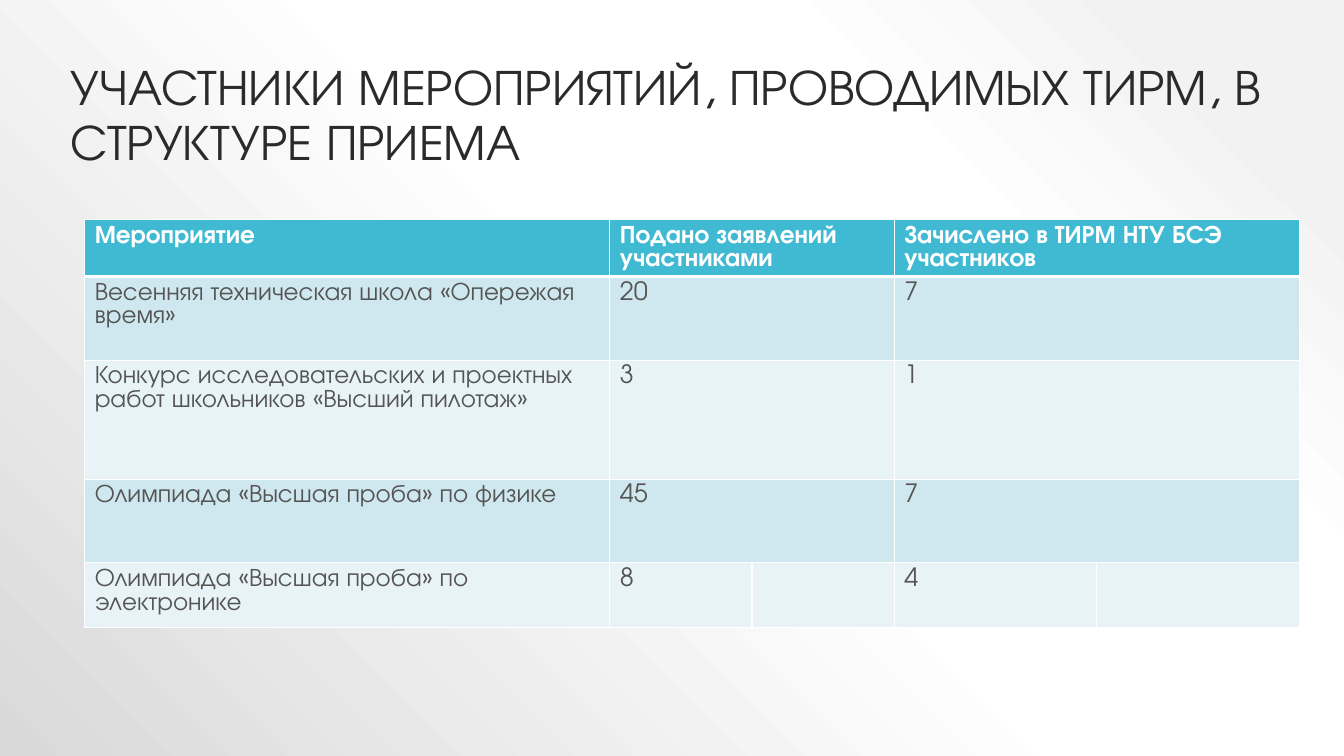
"""Build a slide with a table of event participants among admitted students."""
from dataclasses import dataclass

from lxml.etree import SubElement
from pptx import Presentation
from pptx.dml.color import RGBColor
from pptx.enum.text import MSO_ANCHOR, PP_ALIGN
from pptx.oxml.ns import qn
from pptx.slide import Slide
from pptx.table import Table, _Cell
from pptx.text.text import TextFrame
from pptx.util import Inches, Pt

WIDE, TALL = Inches(13.33), Inches(7.5)
FONT = "TeX Gyre Adventor"
WHITE, TEAL, INK, GREY = "FFFFFF", "40BAD2", "2A2A2A", "545454"
BANDS = "CFE7EE", "E8F3F7"
STOPS = (10, "F2F2F2"), (28, WHITE), (48, WHITE), (100, "D9D9D9")
COLS = 39.08, 10.58, 10.58, 15.08, 15.08
PAIRS = 1, 3


@dataclass(frozen=True)
class Style:
    """Look of a piece of text."""

    size: float
    tint: str
    bold: bool
    lead: float


@dataclass(frozen=True)
class Row:
    """Event, its two counts, and the row height in percent of the slide."""

    event: str
    sent: str
    taken: str
    high: float
    split: bool = False


TITLE = Style(36, INK, False, 0.9)
HEAD = Style(18, WHITE, True, 1.0)
BODY = Style(18, GREY, False, 1.0)

ROWS = [
    Row("Мероприятие", "Подано заявлений участниками",
        "Зачислено в ТИРМ НТУ БСЭ участников", 6.4),
    Row("Весенняя техническая школа «Опережая время»", "20", "7", 11.07),
    Row("Конкурс исследовательских и проектных работ школьников "
        "«Высший пилотаж»", "3", "1", 15.73),
    Row("Олимпиада «Высшая проба» по физике", "45", "7", 11.07),
    Row("Олимпиада «Высшая проба» по электронике", "8", "4", 8.53, True),
]


def across(part: float) -> int:
    """Turn a percentage of the slide's width into a length."""
    return round(WIDE * part / 100)


def down(part: float) -> int:
    """Turn a percentage of the slide's height into a length."""
    return round(TALL * part / 100)


def color(code: str) -> RGBColor:
    """Read a hex string as a colour."""
    return RGBColor.from_string(code)


def write(frame: TextFrame, text: str, style: Style) -> None:
    """Put one styled run into a text frame."""
    para = frame.paragraphs[0]
    para.alignment = PP_ALIGN.LEFT
    para.line_spacing = style.lead
    run = para.add_run()
    run.text = text
    font = run.font
    font.name, font.size, font.bold = FONT, Pt(style.size), style.bold
    font.color.rgb = color(style.tint)


def shade(slide: Slide) -> None:
    """Fill the background with a gradient around the top right corner."""
    slide.background.fill.gradient()
    grad = slide.element.find(".//" + qn("a:gradFill"))
    for node in list(grad):
        grad.remove(node)
    stops = SubElement(grad, qn("a:gsLst"))
    for pos, code in STOPS:
        stop = SubElement(stops, qn("a:gs"), pos=str(pos * 1000))
        SubElement(stop, qn("a:srgbClr"), val=code)
    ring = SubElement(grad, qn("a:path"), path="circle")
    SubElement(ring, qn("a:fillToRect"), l="100000", b="100000")


def paint(cell: _Cell, fill: str, top: float, base: float) -> None:
    """Give a cell white borders and a plain fill."""
    props = cell._tc.get_or_add_tcPr()
    for side, width in zip("LRTB", (1, 1, top, base)):
        line = SubElement(props, qn(f"a:ln{side}"), w=str(Pt(width)))
        solid = SubElement(line, qn("a:solidFill"))
        SubElement(solid, qn("a:srgbClr"), val=WHITE)
    cell.fill.solid()
    cell.fill.fore_color.rgb = color(fill)


def fill_row(table: Table, index: int, row: Row) -> None:
    """Format, join and label the cells of one row."""
    first = index == 0
    table.rows[index].height = down(row.high)
    fill = TEAL if first else BANDS[(index - 1) % 2]
    for col in range(len(COLS)):
        paint(table.cell(index, col), fill, 3 if index == 1 else 1, 3 if first else 1)
    if not row.split:
        for col in PAIRS:
            table.cell(index, col).merge(table.cell(index, col + 1))
    for col, text in zip((0, *PAIRS), (row.event, row.sent, row.taken)):
        write(table.cell(index, col).text_frame, text, HEAD if first else BODY)


def add_title(slide: Slide) -> None:
    """Place and write the heading."""
    title = slide.shapes.title
    title.left, title.top = across(4.5), down(4)
    title.width, title.height = across(91), down(19.33)
    title.text_frame.word_wrap = True
    title.text_frame.vertical_anchor = MSO_ANCHOR.BOTTOM
    write(title.text_frame,
          "УЧАСТНИКИ МЕРОПРИЯТИЙ, ПРОВОДИМЫХ ТИРМ, В СТРУКТУРЕ ПРИЕМА", TITLE)


def add_grid(slide: Slide) -> None:
    """Draw the table of events."""
    high = sum(row.high for row in ROWS)
    table = slide.shapes.add_table(
        len(ROWS), len(COLS), across(6.3), down(29.07),
        across(sum(COLS)), down(high)).table
    for col, part in zip(table.columns, COLS):
        col.width = across(part)
    for index, row in enumerate(ROWS):
        fill_row(table, index, row)


def main() -> None:
    """Make the deck and save it."""
    deck = Presentation()
    deck.slide_width, deck.slide_height = WIDE, TALL
    slide = deck.slides.add_slide(deck.slide_layouts[5])
    shade(slide)
    add_title(slide)
    add_grid(slide)
    deck.save("out.pptx")


if __name__ == "__main__":
    main()
